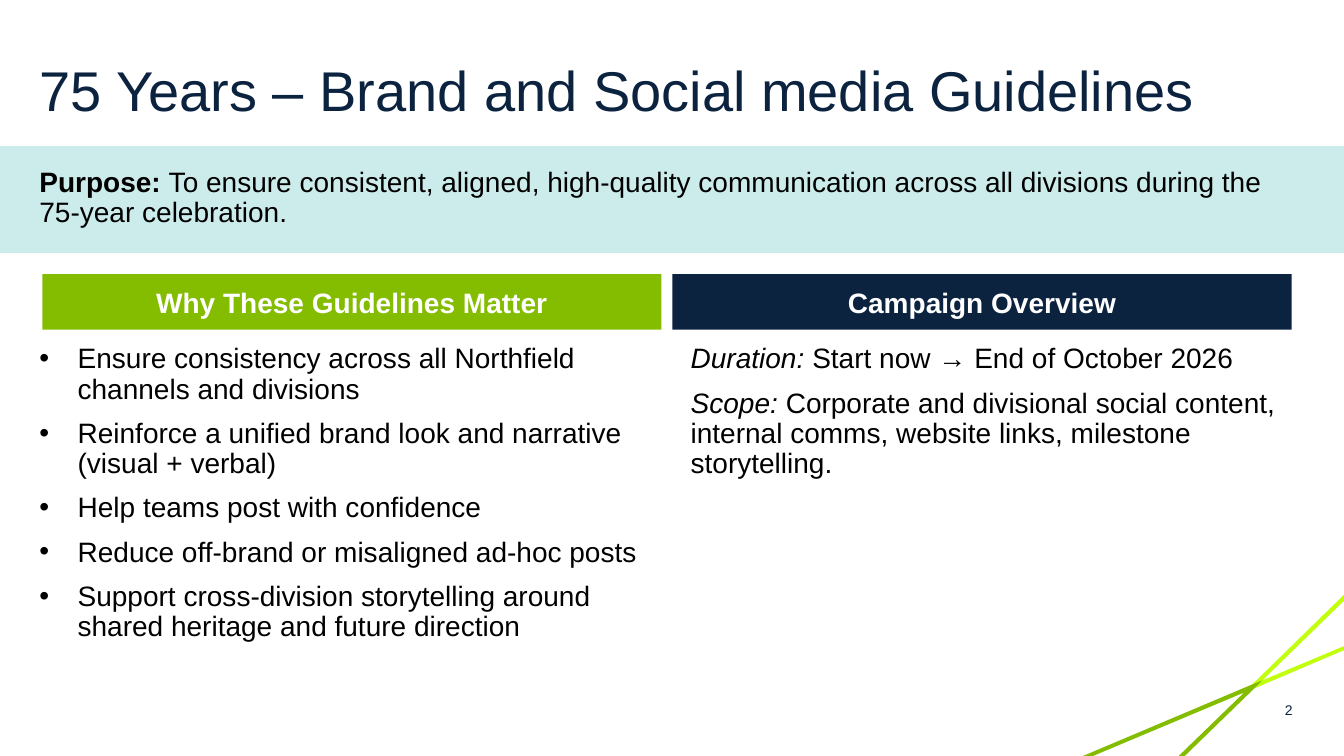
from lxml.etree import SubElement
from pptx import Presentation
from pptx.dml.color import RGBColor
from pptx.enum.shapes import MSO_SHAPE
from pptx.enum.text import MSO_ANCHOR, PP_ALIGN
from pptx.oxml.ns import qn
from pptx.util import Pt

SCALE = 9144  # EMU per px, 100 px to the inch

WHITE = RGBColor(0xFF, 0xFF, 0xFF)
BLACK = RGBColor(0x00, 0x00, 0x00)
NAVY = RGBColor(0x0C, 0x23, 0x40)
GREEN = RGBColor(0x84, 0xBD, 0x00)
LIME = RGBColor(0xC1, 0xFF, 0x0F)
PALE_TEAL = RGBColor(0xCC, 0xEB, 0xEB)


class SlideBuilder:
    font_name = "Arial"
    body_size = 20
    line_spacing = 0.9
    space_before = 10
    bullet_indent = 38

    def __init__(self, slide):
        self.slide = slide

    def style(self, font, size, color, bold=None):
        font.name = self.font_name
        font.size = Pt(size)
        font.color.rgb = color
        font.bold = bold

    def paint(self, shape, color):
        shape.shadow.inherit = False
        shape.fill.solid()
        shape.fill.fore_color.rgb = color
        shape.line.fill.background()

    def polygon(self, points, color):
        builder = self.slide.shapes.build_freeform(*points[0], scale=SCALE)
        builder.add_line_segments(points[1:], close=True)
        self.paint(builder.convert_to_shape(), color)

    def bar(self, box, color, label=None):
        shape = self.slide.shapes.add_shape(
            MSO_SHAPE.RECTANGLE, *(value * SCALE for value in box))
        self.paint(shape, color)
        if label:
            shape.text_frame.vertical_anchor = MSO_ANCHOR.MIDDLE
            paragraph = shape.text_frame.paragraphs[0]
            paragraph.text = label
            paragraph.alignment = PP_ALIGN.CENTER
            self.style(paragraph.font, self.body_size, WHITE, True)

    def text_frame(self, box, anchor=MSO_ANCHOR.TOP):
        shape = self.slide.shapes.add_textbox(*(value * SCALE for value in box))
        frame = shape.text_frame
        frame.word_wrap = True
        frame.vertical_anchor = anchor
        frame.margin_left = frame.margin_right = 0
        frame.margin_top = frame.margin_bottom = 0
        return frame

    def line(self, box, text, size, alignment=PP_ALIGN.LEFT):
        paragraph = self.text_frame(box, MSO_ANCHOR.MIDDLE).paragraphs[0]
        paragraph.text = text
        paragraph.alignment = alignment
        paragraph.line_spacing = self.line_spacing
        self.style(paragraph.font, size, NAVY)

    def body(self, box, items, lead=None, bullets=False):
        """Each item is a (lead-in, text) pair; lead names its font emphasis."""
        frame = self.text_frame(box)
        for index, (lead_in, text) in enumerate(items):
            paragraph = frame.add_paragraph() if index else frame.paragraphs[0]
            paragraph.line_spacing = self.line_spacing
            if index:
                paragraph.space_before = Pt(self.space_before)
            if bullets:
                self.add_bullet(paragraph)
            self.style(paragraph.font, self.body_size, BLACK)
            if lead_in:
                run = paragraph.add_run()
                run.text = lead_in
                setattr(run.font, lead, True)
            paragraph.add_run().text = text

    def add_bullet(self, paragraph):
        properties = paragraph._p.get_or_add_pPr()
        indent = self.bullet_indent * SCALE
        properties.set("marL", str(indent))
        properties.set("indent", str(-indent))
        SubElement(properties, qn("a:buFont")).set("typeface", self.font_name)
        SubElement(properties, qn("a:buChar")).set("char", "•")


def main():
    presentation = Presentation()
    presentation.slide_width = 1333 * SCALE
    presentation.slide_height = 750 * SCALE
    builder = SlideBuilder(
        presentation.slides.add_slide(presentation.slide_layouts[6]))

    # Crossing ribbons in the corner
    builder.polygon([(1333, 590), (1242, 679), (1234, 687), (1244, 683),
                     (1333, 645), (1333, 641), (1252, 675), (1333, 596)], LIME)
    builder.polygon([(1242, 679), (1074, 750), (1084, 750), (1234, 687),
                     (1169, 750), (1175, 750), (1244, 683), (1252, 675)], GREEN)

    # Title and page number
    builder.line((39, 40, 1252, 106),
                 "75 Years – Brand and Social media Guidelines", 40)
    builder.line((1213, 685, 69, 40), "2", 10, PP_ALIGN.RIGHT)

    # Purpose band
    builder.bar((0, 145, 1333, 106), PALE_TEAL)
    builder.body((39, 167, 1252, 71), [
        ("Purpose: ", "To ensure consistent, aligned, high‑quality communication "
                      "across all divisions during the 75‑year celebration."),
    ], lead="bold")

    # Column headings
    headings = [("Why These Guidelines Matter", GREEN), ("Campaign Overview", NAVY)]
    for column, (label, color) in enumerate(headings):
        builder.bar((42 + 625 * column, 272, 614, 55), color, label)

    # Column contents
    reasons = [
        "Ensure consistency across all Northfield channels and divisions",
        "Reinforce a unified brand look and narrative (visual + verbal)",
        "Help teams post with confidence",
        "Reduce off‑brand or misaligned ad‑hoc posts",
        "Support cross‑division storytelling around shared heritage and "
        "future direction",
    ]
    builder.body((39, 342, 606, 343), [(None, reason) for reason in reasons],
                 bullets=True)
    builder.body((685, 342, 606, 343), [
        ("Duration: ", "Start now → End of October 2026"),
        ("Scope: ", "Corporate and divisional social content, internal comms, "
                    "website links, milestone storytelling."),
    ], lead="italic")

    presentation.save("out.pptx")


if __name__ == "__main__":
    main()
